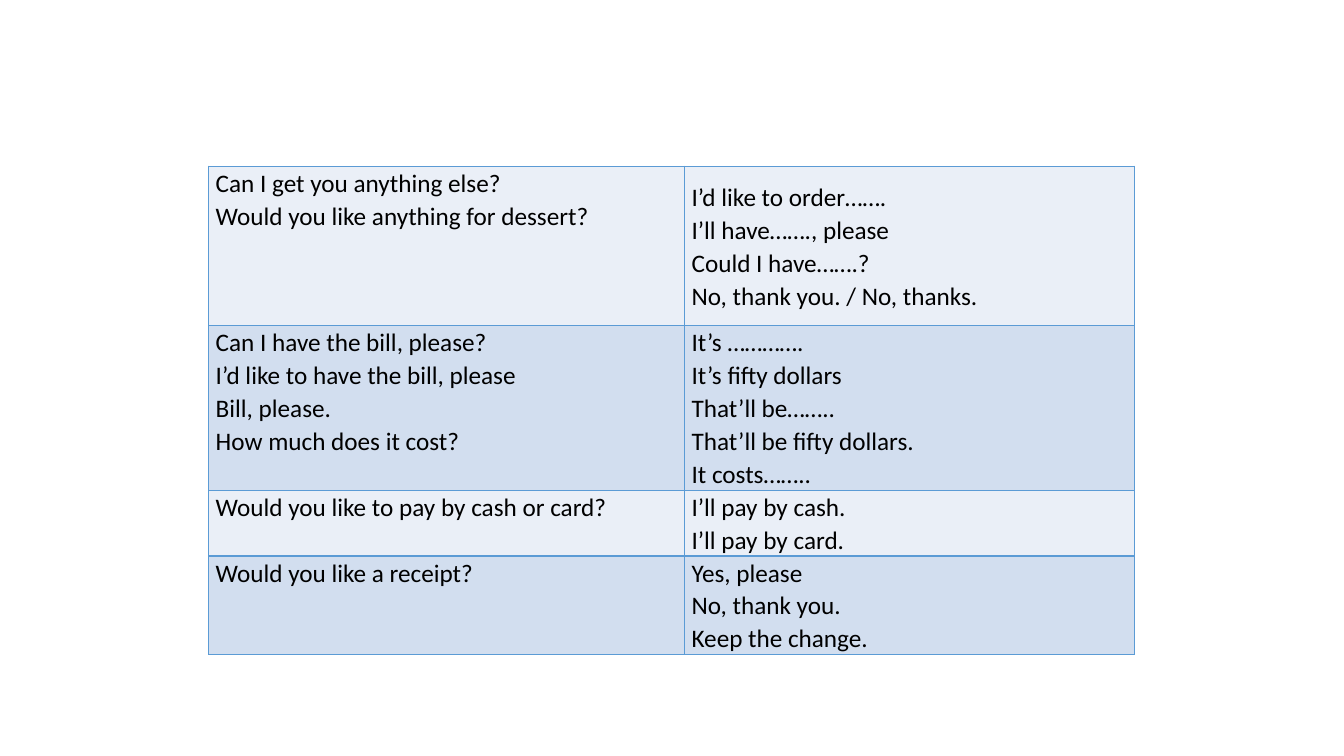
from lxml.etree import SubElement
from pptx import Presentation
from pptx.dml.color import RGBColor as RGB
from pptx.oxml.ns import qn
from pptx.util import Inches, Pt

ROWS = [
    (["Can I get you anything else?", "Would you like anything for dessert?"],
     ["I’d like to order…….", "I’ll have……., please", "Could I have…….?",
      "No, thank you. / No, thanks."]),
    (["Can I have the bill, please?", "I’d like to have the bill, please",
      "Bill, please.", "How much does it cost?"],
     ["It’s ………….", "It’s fifty dollars", "That’ll be……..",
      "That’ll be fifty dollars.", "It costs…….."]),
    (["Would you like to pay by cash or card?"],
     ["I’ll pay by cash.", "I’ll pay by card."]),
    (["Would you like a receipt?"],
     ["Yes, please", "No, thank you.", "Keep the change."]),
]
COLORS = {"text": "000000", "border": "5B9BD5", "light": "EAEFF7", "dark": "D2DEEF"}
BANDS = ["light", "dark"]
COL_WIDTHS = [4.72, 4.46]
ROW_HEIGHTS = [1.58, 1.63, 0.65, 0.98]
LEFT, TOP = 2.07, 1.65
FIRST_ANSWER_TOP = 0.14
MARGINS = {"margin_left": Inches(0.07), "margin_right": Inches(0.07),
           "margin_top": 0, "margin_bottom": 0}
FONT = {"name": "Calibri", "size": Pt(18), "bold": False}


def set_attrs(obj, values):
    for name, value in values.items():
        setattr(obj, name, value)


def add_borders(cell):
    tcPr = cell._tc.get_or_add_tcPr()
    for i, side in enumerate(("a:lnL", "a:lnR", "a:lnT", "a:lnB")):
        ln = tcPr.makeelement(qn(side), {"w": str(Pt(1))})
        fill = SubElement(ln, qn("a:solidFill"))
        SubElement(fill, qn("a:srgbClr"), val=COLORS["border"])
        tcPr.insert(i, ln)


def fill_cell(cell, lines, band):
    set_attrs(cell, MARGINS)
    cell.fill.solid()
    cell.fill.fore_color.rgb = RGB.from_string(COLORS[band])
    add_borders(cell)
    tf = cell.text_frame
    for i, line in enumerate(lines):
        p = tf.add_paragraph() if i else tf.paragraphs[0]
        p.line_spacing = 1.07
        r = p.add_run()
        r.text = line
        set_attrs(r.font, FONT)
        r.font.color.rgb = RGB.from_string(COLORS["text"])


prs = Presentation()
prs.slide_width, prs.slide_height = Inches(13.33), Inches(7.5)
s = prs.slides.add_slide(prs.slide_layouts[6])
table = s.shapes.add_table(
    len(ROWS), len(COL_WIDTHS), Inches(LEFT), Inches(TOP),
    Inches(sum(COL_WIDTHS)), Inches(sum(ROW_HEIGHTS))).table
set_attrs(table, {"first_row": False, "horz_banding": False})
for col, width in zip(table.columns, COL_WIDTHS):
    col.width = Inches(width)
for i, (row, height) in enumerate(zip(ROWS, ROW_HEIGHTS)):
    table.rows[i].height = Inches(height)
    for j, lines in enumerate(row):
        fill_cell(table.cell(i, j), lines, BANDS[i % 2])
table.cell(0, 1).margin_top = Inches(FIRST_ANSWER_TOP)

prs.save("out.pptx")
